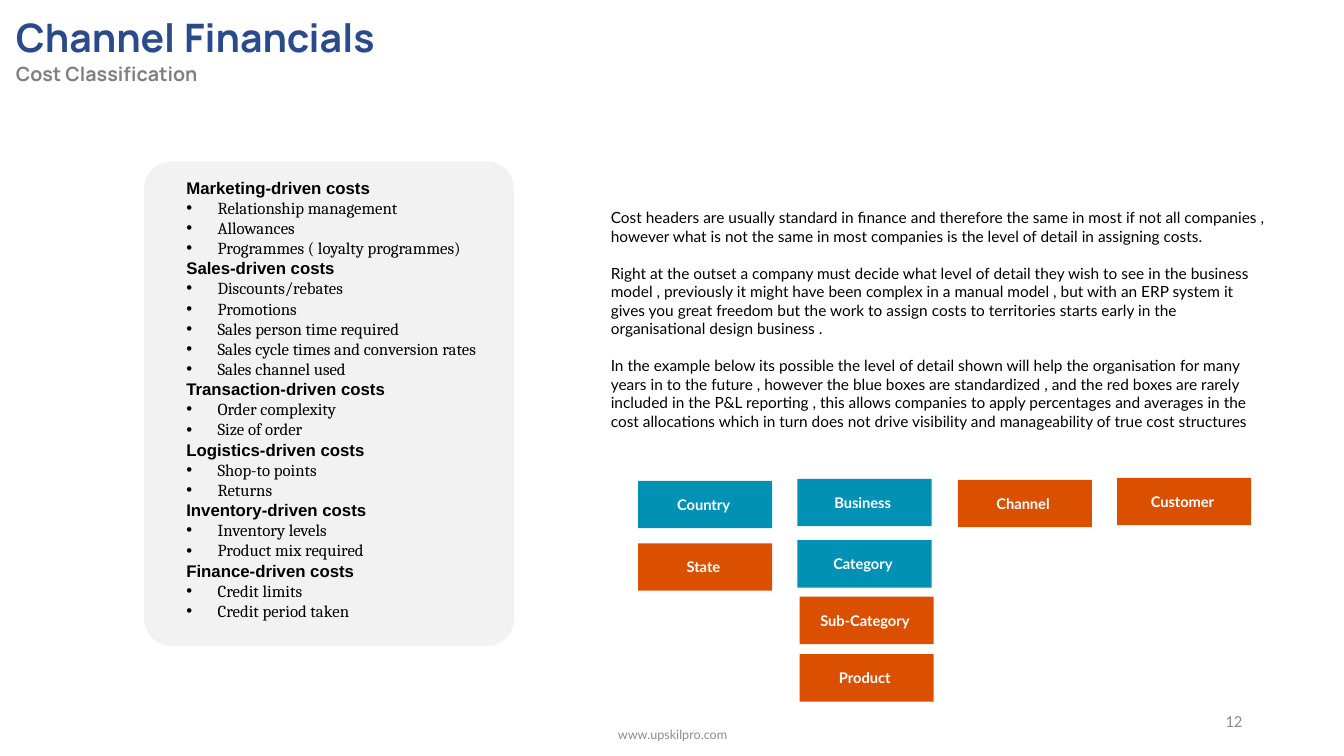
from dataclasses import dataclass

from lxml import etree
from pptx import Presentation
from pptx.dml.color import RGBColor
from pptx.enum.shapes import MSO_SHAPE
from pptx.enum.text import MSO_ANCHOR, PP_ALIGN
from pptx.oxml.ns import qn
from pptx.util import Emu, Pt

RECTANGLE, ROUNDED = MSO_SHAPE.RECTANGLE, MSO_SHAPE.ROUNDED_RECTANGLE
LEFT, CENTER, RIGHT = PP_ALIGN.LEFT, PP_ALIGN.CENTER, PP_ALIGN.RIGHT
TOP, MIDDLE = MSO_ANCHOR.TOP, MSO_ANCHOR.MIDDLE

PX = 9144  # 100 px to the inch
BULLET_INDENT = 31
BOX_WIDTH, BOX_HEIGHT = 133, 47

COLORS = {
    "panel": "F2F2F2",
    "title": "2A4A8B",
    "subtitle": "808080",
    "footer": "8C8C8C",
    "text": "000000",
    "white": "FFFFFF",
    "blue": "0091B5",
    "red": "DB5000",
}


@dataclass
class Area:
    left: int
    top: int
    width: int
    height: int

    def emu(self) -> list[Emu]:
        return [Emu(v * PX) for v in (self.left, self.top, self.width, self.height)]


@dataclass
class Style:
    font: str
    size: float
    color: str
    bold: bool = False


@dataclass
class CostGroup:
    heading: str
    items: list[str]


@dataclass
class LevelBox:
    label: str
    left: int
    top: int
    color: str


HEADING = Style("Arial", 12, "text", True)
ITEM = Style("Cambria", 12, "text")
BODY = Style("Lato", 11, "text")
BOX_LABEL = Style("Lato", 10.5, "white", True)
TITLE = Style("Manrope", 28, "title", True)
TITLE_SPACE = Style("Manrope", 32, "title", True)
SUBTITLE = Style("Manrope", 14, "subtitle", True)
PAGE_NUMBER = Style("Calibri", 12, "footer")
WEBSITE = Style("Lato", 9, "footer")

COST_GROUPS = [
    CostGroup("Marketing-driven costs", [
        "Relationship management", "Allowances", "Programmes ( loyalty programmes)"]),
    CostGroup("Sales-driven costs", [
        "Discounts/rebates", "Promotions", "Sales person time required",
        "Sales cycle times and conversion rates", "Sales channel used"]),
    CostGroup("Transaction-driven costs", ["Order complexity", "Size of order"]),
    CostGroup("Logistics-driven costs", ["Shop-to points", "Returns"]),
    CostGroup("Inventory-driven costs", ["Inventory levels", "Product mix required"]),
    CostGroup("Finance-driven costs", ["Credit limits", "Credit period taken"]),
]

BODY_PARAGRAPHS = [
    "Cost headers are usually standard in finance and therefore the same in most if not all "
    "companies , however what is not the same in most companies is the level of detail in "
    "assigning costs.",
    "Right at the outset a company must decide what level of detail they wish to see in the "
    "business model , previously it might have been complex in a manual model , but with an ERP "
    "system it gives you great freedom but the work to assign costs to territories starts early "
    "in the organisational design business .",
    "In the example below its possible the level of detail shown will help the organisation for "
    "many years in to the future , however the blue boxes are standardized , and the red boxes "
    "are rarely included in the P&L reporting , this allows companies to apply percentages and "
    "averages in the cost allocations which in turn does not drive visibility and manageability "
    "of true cost structures",
]

LEVEL_BOXES = [
    LevelBox("Country ", 633, 477, "blue"),
    LevelBox("State ", 633, 539, "red"),
    LevelBox("Business ", 791, 475, "blue"),
    LevelBox("Category ", 791, 536, "blue"),
    LevelBox("Sub-Category ", 793, 592, "red"),
    LevelBox("Product ", 793, 649, "red"),
    LevelBox("Channel ", 950, 476, "red"),
    LevelBox("Customer ", 1108, 474, "red"),
]


def style_font(font, style: Style) -> None:
    font.name = style.font
    font.size = Pt(style.size)
    font.bold = style.bold
    font.color.rgb = RGBColor.from_string(COLORS[style.color])


def add_bullet(paragraph) -> None:
    properties = paragraph._p.get_or_add_pPr()
    properties.set("marL", str(BULLET_INDENT * PX))
    properties.set("indent", str(-BULLET_INDENT * PX))
    etree.SubElement(properties, qn("a:buFont")).set("typeface", "Arial")
    etree.SubElement(properties, qn("a:buChar")).set("char", "•")


def add_text(slide, area: Area, lines: list[str], style: Style, align=LEFT, anchor=TOP):
    text_frame = slide.shapes.add_textbox(*area.emu()).text_frame
    text_frame.word_wrap = True
    text_frame.vertical_anchor = anchor
    text_frame.text = "\n".join(lines)
    for paragraph in text_frame.paragraphs:
        paragraph.alignment = align
        for run in paragraph.runs:
            style_font(run.font, style)
    return text_frame


def add_block(slide, kind, area: Area, color: str):
    shape = slide.shapes.add_shape(kind, *area.emu())
    shape.shadow.inherit = False
    shape.fill.solid()
    shape.fill.fore_color.rgb = RGBColor.from_string(COLORS[color])
    shape.line.fill.background()
    return shape


def add_title(slide) -> None:
    text_frame = add_text(slide, Area(6, 3, 861, 88), ["", "Cost Classification"], SUBTITLE)
    # The wider space sets the height of the title line
    for text, style in (("Channel", TITLE), (" ", TITLE_SPACE), ("Financials", TITLE)):
        run = text_frame.paragraphs[0].add_run()
        run.text = text
        style_font(run.font, style)


def add_cost_list(slide) -> None:
    panel = add_block(slide, ROUNDED, Area(143, 160, 367, 481), "panel")
    panel.adjustments[0] = 0.075
    headings = {group.heading for group in COST_GROUPS}
    lines = [line for group in COST_GROUPS for line in (group.heading, *group.items)]
    text_frame = add_text(slide, Area(175, 171, 313, 454), lines, ITEM)
    for paragraph in text_frame.paragraphs:
        if paragraph.text in headings:
            style_font(paragraph.runs[0].font, HEADING)
        else:
            add_bullet(paragraph)


def add_level_box(slide, box: LevelBox) -> None:
    area = Area(box.left, box.top, BOX_WIDTH, BOX_HEIGHT)
    text_frame = add_block(slide, RECTANGLE, area, box.color).text_frame
    text_frame.text = box.label
    text_frame.vertical_anchor = MIDDLE
    paragraph = text_frame.paragraphs[0]
    paragraph.alignment = CENTER
    style_font(paragraph.runs[0].font, BOX_LABEL)


def main() -> None:
    presentation = Presentation()
    presentation.slide_width, presentation.slide_height = Emu(1333 * PX), Emu(750 * PX)
    slide = presentation.slides.add_slide(presentation.slide_layouts[6])

    add_title(slide)
    add_cost_list(slide)

    # Explanation
    body = add_text(slide, Area(596, 202, 673, 232), BODY_PARAGRAPHS, BODY)
    for paragraph in body.paragraphs[1:]:
        paragraph.space_before = Pt(13.2)

    # Levels of detail
    for box in LEVEL_BOXES:
        add_level_box(slide, box)

    # Footer
    add_text(slide, Area(442, 709, 450, 40), ["www.upskilpro.com"], WEBSITE, CENTER, MIDDLE)
    add_text(slide, Area(942, 695, 300, 40), ["12"], PAGE_NUMBER, RIGHT, MIDDLE)

    presentation.save("out.pptx")


if __name__ == "__main__":
    main()
